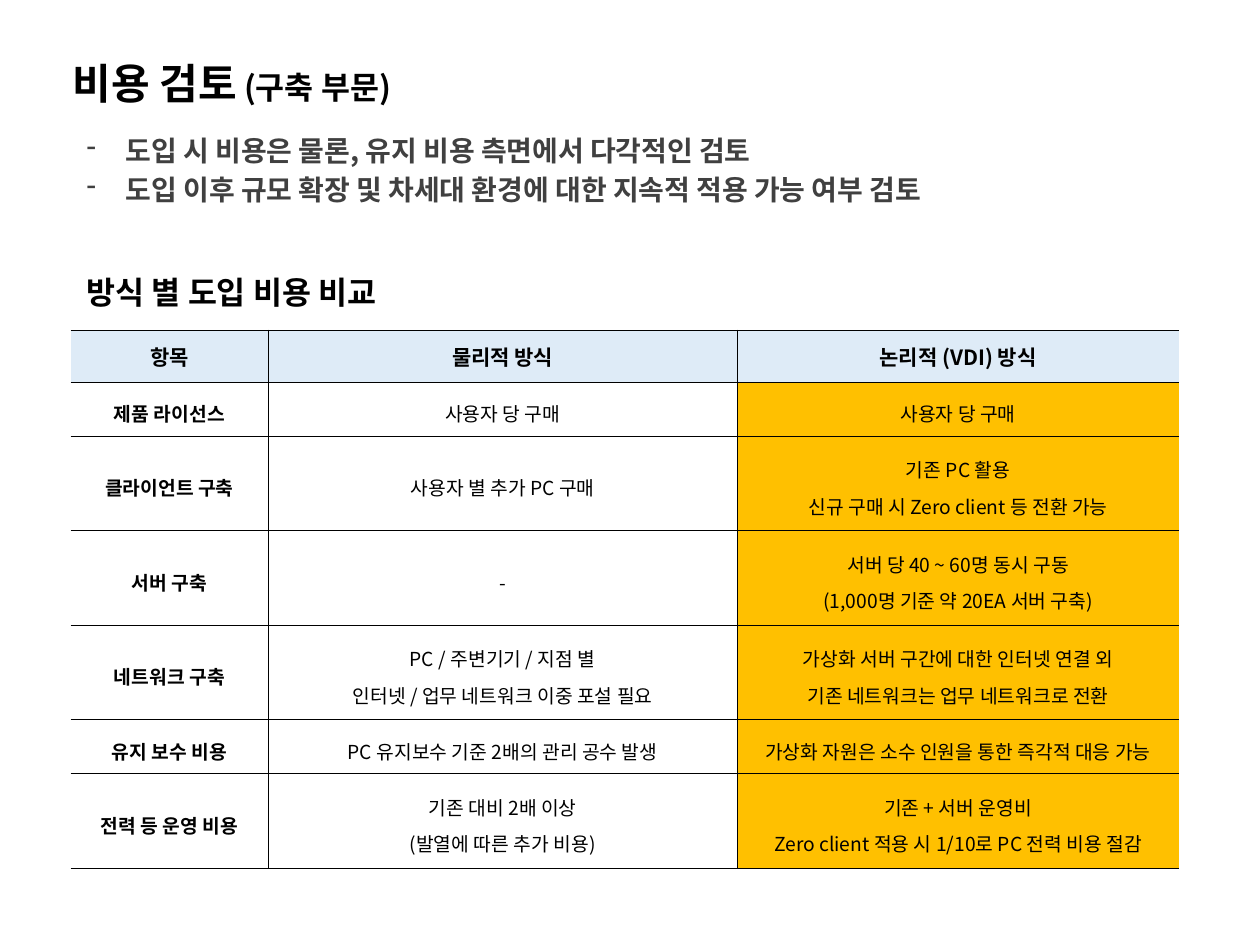
"""Build a cost review slide comparing physical and logical deployment."""
from lxml.etree import SubElement
from pptx import Presentation
from pptx.dml.color import RGBColor
from pptx.enum.text import MSO_ANCHOR as Anchor, MSO_AUTO_SIZE as AutoSize, PP_ALIGN as Align
from pptx.oxml.ns import qn
from pptx.util import Inches, Pt

FONT = "Noto Sans CJK KR"
COLORS = {"text": "000000", "bullet": "404040", "header": "DEEBF7", "highlight": "FFC000"}

TITLE = [("비용 검토", 24), (" (구축 부문)", 18)]
BULLETS = [
    "도입 시 비용은 물론, 유지 비용 측면에서 다각적인 검토",
    "도입 이후 규모 확장 및 차세대 환경에 대한 지속적 적용 가능 여부 검토",
]
SUBTITLE = "방식 별 도입 비용 비교"
COLUMN_WIDTHS = [1.57, 3.72, 3.51]
ROWS = [
    (0.41, ["항목"], ["물리적 방식"], ["논리적 (VDI) 방식"]),
    (0.43, ["제품 라이선스"], ["사용자 당 구매"], ["사용자 당 구매"]),
    (0.75, ["클라이언트 구축"], ["사용자 별 추가 PC 구매"],
     ["기존 PC 활용", "신규 구매 시 Zero client 등 전환 가능"]),
    (0.75, ["서버 구축"], ["-"],
     ["서버 당 40 ~ 60명 동시 구동", "(1,000명 기준 약 20EA 서버 구축)"]),
    (0.75, ["네트워크 구축"], ["PC / 주변기기 / 지점 별\v인터넷 / 업무 네트워크 이중 포설 필요"],
     ["가상화 서버 구간에 대한 인터넷 연결 외", "기존 네트워크는 업무 네트워크로 전환"]),
    (0.43, ["유지 보수 비용"], ["PC 유지보수 기준 2배의 관리 공수 발생"],
     ["가상화 자원은 소수 인원을 통한 즉각적 대응 가능"]),
    (0.75, ["전력 등 운영 비용"], ["기존 대비 2배 이상", "(발열에 따른 추가 비용)"],
     ["기존 + 서버 운영비", "Zero client 적용 시 1/10로 PC 전력 비용 절감"]),
]


def rgb(name):
    return RGBColor.from_string(COLORS[name])


def style_font(font, size, bold=True, color="text"):
    font.name, font.size, font.bold = FONT, Pt(size), bold
    font.color.rgb = rgb(color)
    SubElement(font._element, qn("a:ea"), typeface=FONT)


def add_text_box(slide, left, top, width, height, wrap=True, grow=True):
    box = slide.shapes.add_textbox(Inches(left), Inches(top), Inches(width), Inches(height))
    frame = box.text_frame
    frame.word_wrap = wrap
    frame.auto_size = AutoSize.SHAPE_TO_FIT_TEXT if grow else AutoSize.NONE
    return frame


def fill_paragraphs(frame, lines):
    for index, line in enumerate(lines):
        para = frame.add_paragraph() if index else frame.paragraphs[0]
        para.text = line
        yield index, para


def set_border(cell, side, width):
    line = SubElement(cell._tc.get_or_add_tcPr(), qn(f"a:ln{side}"), w=str(Pt(width)))
    if width:
        fill = SubElement(line, qn("a:solidFill"))
        SubElement(fill, qn("a:srgbClr"), val=COLORS["text"])
    else:
        SubElement(line, qn("a:noFill"))


def add_bullets(slide):
    frame = add_text_box(slide, 0.59, 1.01, 9.33, 1.02, grow=False)
    for index, para in fill_paragraphs(frame, BULLETS):
        props = para._p.get_or_add_pPr()
        props.set("marL", str(Inches(0.31)))
        props.set("indent", str(-Inches(0.31)))
        SubElement(props, qn("a:buChar"), char="-")
        para.space_before = Pt(3.2 if index else 0)
        style_font(para.font, 16, color="bullet")


def add_cost_table(slide):
    heights = [row[0] for row in ROWS]
    last_row, last_column = len(ROWS) - 1, len(COLUMN_WIDTHS) - 1
    table = slide.shapes.add_table(
        len(ROWS), len(COLUMN_WIDTHS), Inches(0.56), Inches(2.62),
        Inches(sum(COLUMN_WIDTHS)), Inches(sum(heights))).table
    for column, width in zip(table.columns, COLUMN_WIDTHS):
        column.width = Inches(width)
    for r, (height, *texts) in enumerate(ROWS):
        table.rows[r].height = Inches(height)
        for c, lines in enumerate(texts):
            cell = table.cell(r, c)
            cell.vertical_anchor = Anchor.MIDDLE
            set_border(cell, "L", 0.25 if c else 0)
            set_border(cell, "R", 0.25 if c < last_column else 0)
            set_border(cell, "T", 0.25 if r else 0.5)
            set_border(cell, "B", 0.25 if r < last_row else 0.5)
            if r and c < last_column:
                cell.fill.background()
            else:
                cell.fill.solid()
                cell.fill.fore_color.rgb = rgb("highlight" if r else "header")
            for _, para in fill_paragraphs(cell.text_frame, lines):
                para.alignment = Align.CENTER
                if r:
                    para.line_spacing = 1.3
                style_font(para.font, 11 if r else 12, bold=not (r and c))


def main():
    deck = Presentation()
    deck.slide_width, deck.slide_height = Inches(10), Inches(7.5)
    slide = deck.slides.add_slide(deck.slide_layouts[6])

    title = add_text_box(slide, 0.48, 0.41, 8.33, 0.5).paragraphs[0]
    for text, size in TITLE:
        span = title.add_run()
        span.text = text
        style_font(span.font, size)

    add_bullets(slide)
    add_cost_table(slide)

    subtitle = add_text_box(slide, 0.59, 2.12, 2.61, 0.4, wrap=False).paragraphs[0]
    subtitle.text = SUBTITLE
    style_font(subtitle.font, 18)

    deck.save("out.pptx")


if __name__ == "__main__":
    main()
